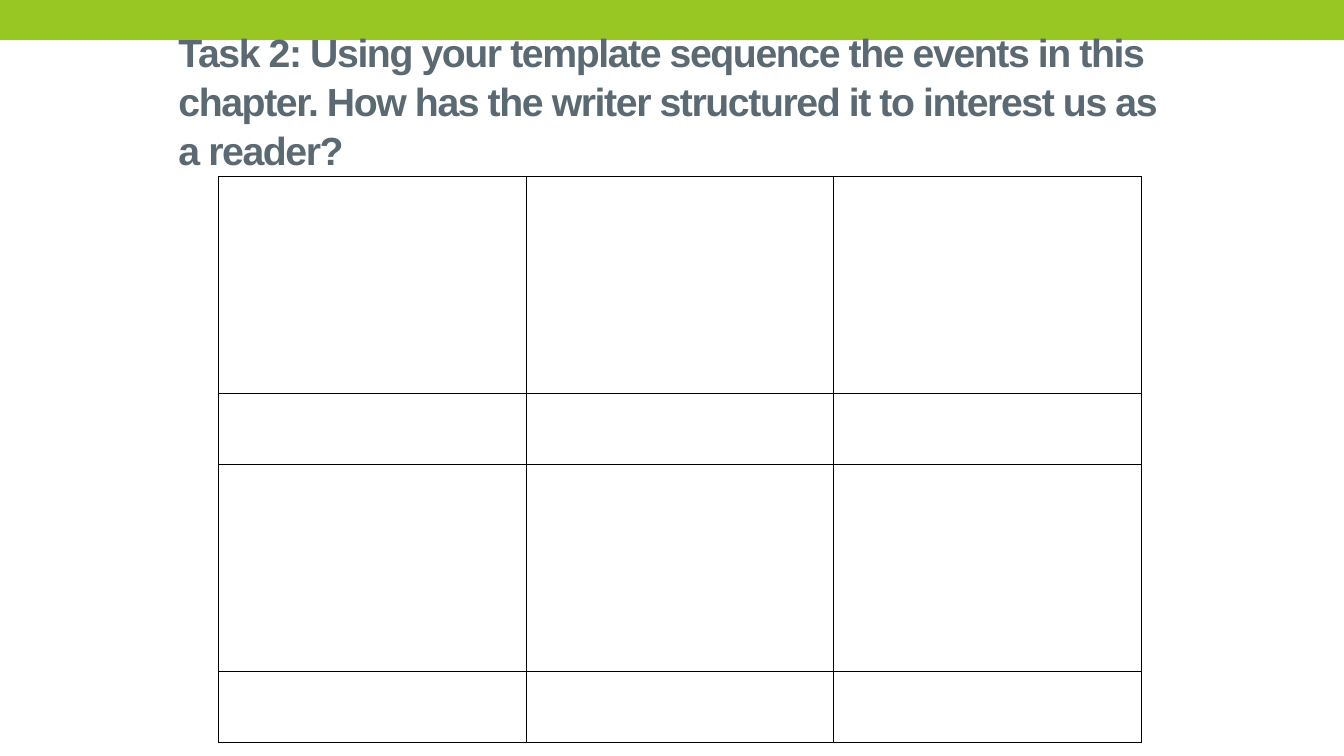
from dataclasses import dataclass

from lxml.etree import SubElement
from pptx import Presentation
from pptx.dml.color import RGBColor
from pptx.enum.shapes import MSO_SHAPE
from pptx.enum.text import MSO_ANCHOR, MSO_AUTO_SIZE, PP_ALIGN
from pptx.oxml.ns import qn
from pptx.table import _Cell
from pptx.util import Emu, Pt

EMU_PER_PX = 9144  # 100 px to the inch
TITLE = (
    "Task 2: Using your template sequence the events in this chapter. "
    "How has the writer structured it to interest us as a reader?"
)


@dataclass(frozen=True)
class Box:
    left: int
    top: int
    width: int
    height: int

    def emu(self) -> tuple[Emu, Emu, Emu, Emu]:
        return px(self.left), px(self.top), px(self.width), px(self.height)


@dataclass(frozen=True)
class StoryRow:
    height: int


def px(length: int) -> Emu:
    return Emu(length * EMU_PER_PX)


def colour(code: str) -> RGBColor:
    return RGBColor.from_string(code)


def outline_cell(cell: _Cell, code: str) -> None:
    properties = cell._tc.get_or_add_tcPr()
    for side in ("lnL", "lnR", "lnT", "lnB"):
        line = SubElement(properties, qn(f"a:{side}"), w=str(Pt(1)))
        fill = SubElement(line, qn("a:solidFill"))
        SubElement(fill, qn("a:srgbClr"), val=code)
    cell.fill.background()


def add_title(page) -> None:
    title = page.shapes.title
    title.left, title.top, title.width, title.height = Box(167, 13, 1000, 173).emu()
    frame = title.text_frame
    frame.word_wrap = True
    frame.auto_size = MSO_AUTO_SIZE.NONE
    frame.vertical_anchor = MSO_ANCHOR.MIDDLE
    para = frame.paragraphs[0]
    para.alignment = PP_ALIGN.LEFT
    para.line_spacing = 1.04
    span = para.add_run()
    span.text = TITLE
    span.font.name = "Arial"
    span.font.size = Pt(28)
    span.font.bold = True
    span.font.color.rgb = colour("5B6973")
    # Tighten the letters by one point
    for properties in title.element.iter(qn("a:rPr")):
        properties.set("spc", "-100")


def add_band(page) -> None:
    band = page.shapes.add_shape(MSO_SHAPE.RECTANGLE, *Box(0, 0, 1333, 40).emu())
    band.shadow.inherit = False
    band.fill.solid()
    band.fill.fore_color.rgb = colour("98C723")
    band.line.fill.background()
    # Keep the band behind the title
    page.shapes.title.element.addprevious(band.element)


def add_storyboard(page, rows: list[StoryRow], columns: int, column_width: int) -> None:
    height = sum(row.height for row in rows)
    box = Box(217, 175, columns * column_width, height)
    table = page.shapes.add_table(len(rows), columns, *box.emu()).table
    table.first_row = False
    table.horz_banding = False
    for column in table.columns:
        column.width = px(column_width)
    for table_row, row in zip(table.rows, rows):
        table_row.height = px(row.height)
    for cell in table.iter_cells():
        outline_cell(cell, "000000")


def main() -> None:
    deck = Presentation()
    deck.slide_width, deck.slide_height = px(1333), px(750)
    page = deck.slides.add_slide(deck.slide_layouts[5])

    # Heading
    add_title(page)
    add_band(page)

    # Tall drawing rows, each above a caption row
    caption = StoryRow(71)
    add_storyboard(page, [StoryRow(215), caption, StoryRow(205), caption], 3, 305)

    deck.save("out.pptx")


if __name__ == "__main__":
    main()
